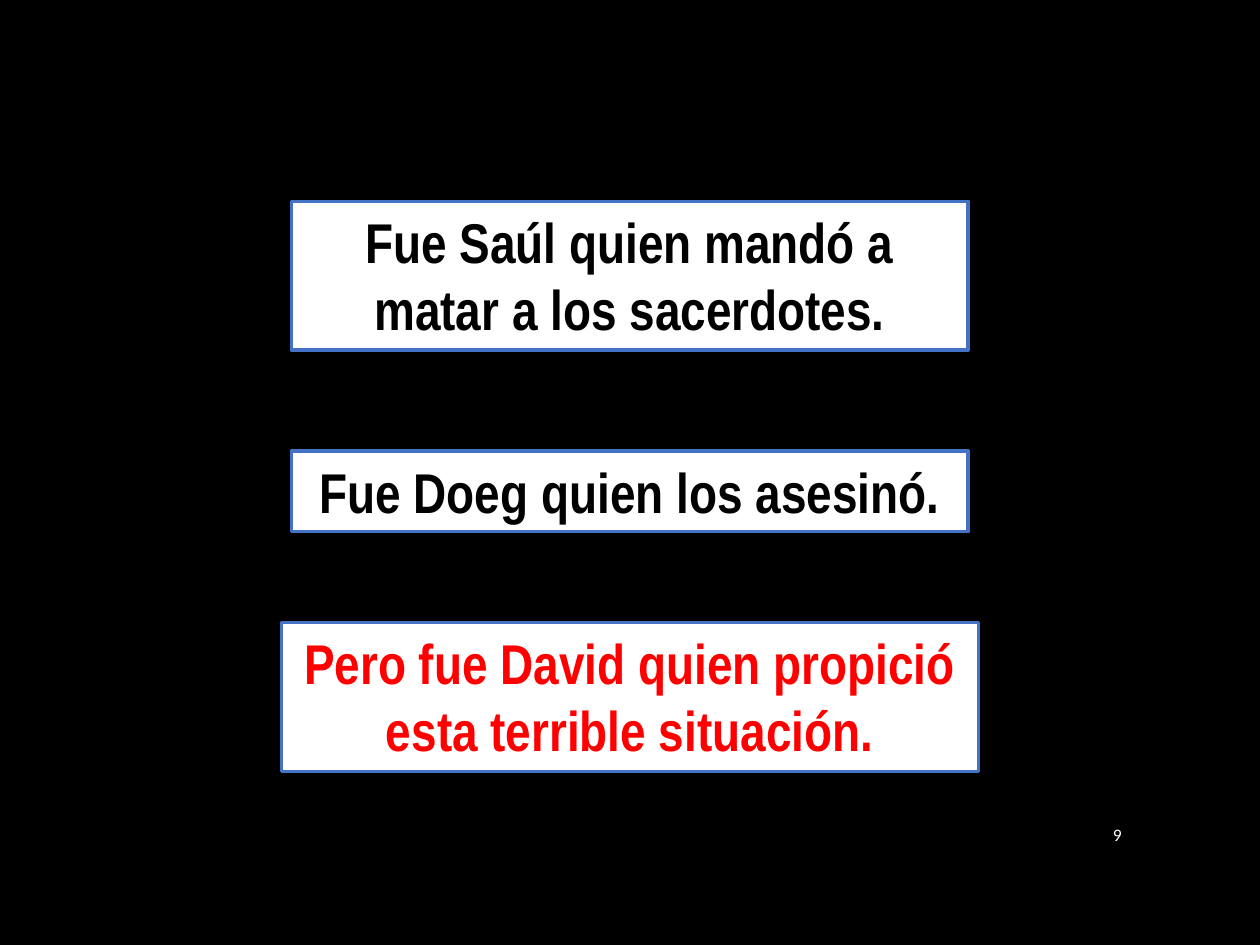
import pptx
import pptx.dml.color
import pptx.enum.shapes
import pptx.enum.text
import pptx.util
from pptx.util import Cm

COLORS = {"back": "000000", "card": "FFFFFF", "edge": "4472C4",
          "plain": "000000", "alert": "FF0000", "page": "FFFFFF"}
WIDTH, HEIGHT = 25.4, 19.05
CARDS = [
    ("Fue Saúl quien mandó a matar a los sacerdotes.", 4.06, 13.64, 3, "plain"),
    ("Fue Doeg quien los asesinó.", 9.09, 13.64, 1.63, "plain"),
    ("Pero fue David quien propició esta terrible situación.", 12.55, 14.05, 3, "alert"),
]


def tint(name):
    """Return the named colour."""
    return pptx.dml.color.RGBColor.from_string(COLORS[name])


def write(shape, text, font="Arial Narrow", size=32, bold=False,
          color="plain", align="CENTER", anchor="TOP"):
    """Put formatted text in a shape."""
    frame = shape.text_frame
    frame.word_wrap = True
    frame.vertical_anchor = pptx.enum.text.MSO_ANCHOR[anchor]
    line = frame.paragraphs[0]
    line.alignment = pptx.enum.text.PP_ALIGN[align]
    run = line.add_run()
    run.text = text
    run.font.name = font
    run.font.size = pptx.util.Pt(size)
    run.font.bold = bold
    run.font.color.rgb = tint(color)


def card(slide, text, box, color):
    """Draw one framed statement in its box."""
    shape = slide.shapes.add_shape(
        pptx.enum.shapes.MSO_SHAPE.RECTANGLE, *map(Cm, box))
    shape.shadow.inherit = False
    shape.fill.solid()
    shape.fill.fore_color.rgb = tint("card")
    shape.line.color.rgb = tint("edge")
    shape.line.width = pptx.util.Pt(2)
    write(shape, text, bold=True, color=color)
    shape.text_frame.auto_size = pptx.enum.text.MSO_AUTO_SIZE.SHAPE_TO_FIT_TEXT


def number(slide, text, box):
    """Place the page number in its box."""
    shape = slide.shapes.add_textbox(*map(Cm, box))
    write(shape, text, font="Calibri", size=10, color="page",
          align="RIGHT", anchor="MIDDLE")


def main():
    """Build and save the slide."""
    deck = pptx.Presentation()
    deck.slide_width, deck.slide_height = Cm(WIDTH), Cm(HEIGHT)
    slide = deck.slides.add_slide(deck.slide_layouts[6])
    slide.background.fill.solid()
    slide.background.fill.fore_color.rgb = tint("back")
    for text, top, width, height, color in CARDS:
        card(slide, text, ((WIDTH - width) / 2, top, width, height), color)
    number(slide, "9", (21.69, 16.31, 1.17, 1.04))
    deck.save("out.pptx")


if __name__ == "__main__":
    main()
